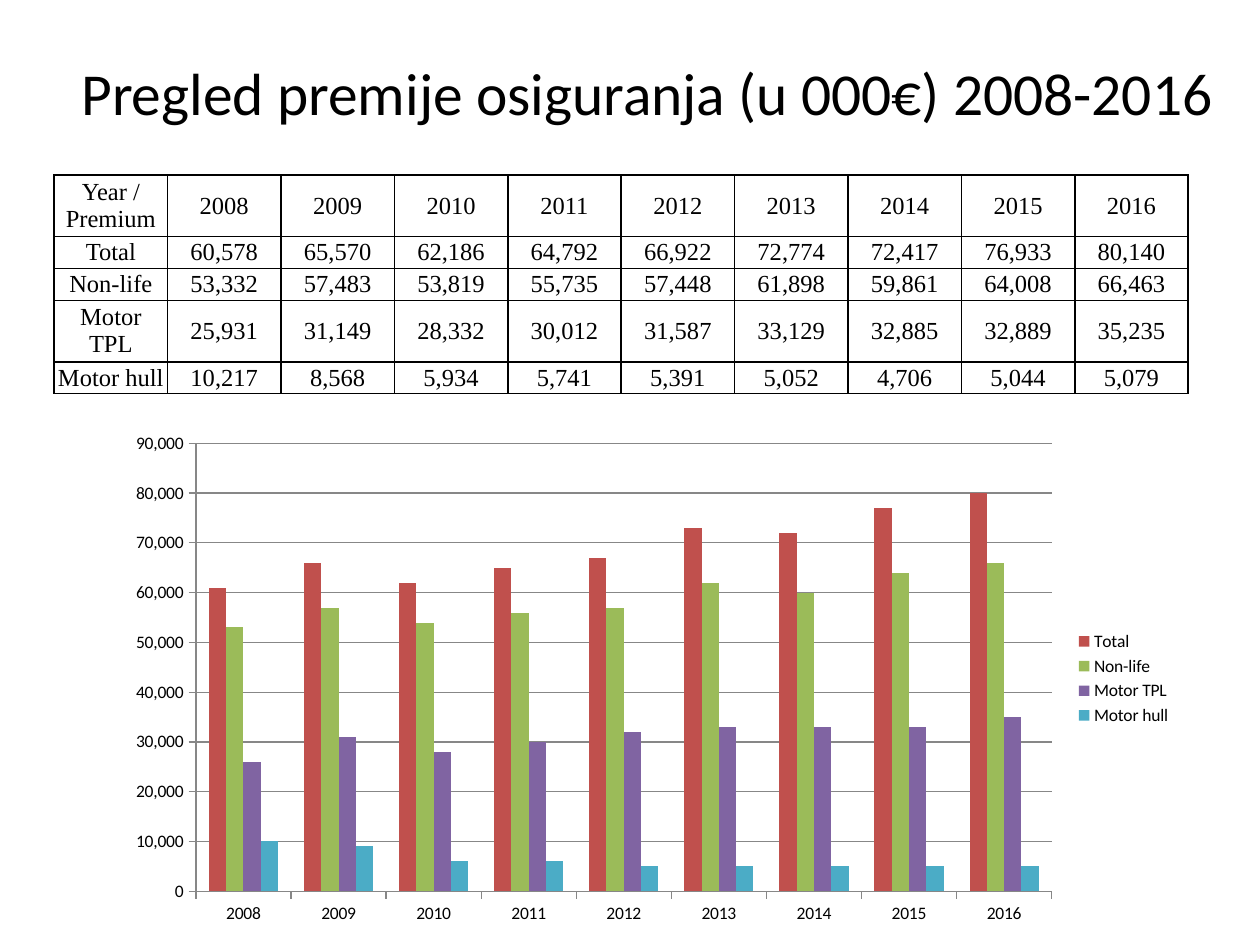
from lxml.etree import SubElement
from pptx import Presentation
from pptx.chart.data import CategoryChartData
from pptx.dml.color import RGBColor
from pptx.enum.chart import XL_CHART_TYPE as ChartType, XL_LEGEND_POSITION as LegendPosition
from pptx.enum.chart import XL_TICK_MARK as TickMark
from pptx.enum.text import MSO_ANCHOR as Anchor, PP_ALIGN as Align
from pptx.oxml.ns import qn
from pptx.util import Inches, Pt

BLACK = "000000"
AXIS_GREY = "878787"
YEARS = [str(year) for year in range(2008, 2017)]
PREMIUMS = {
    "Total": [60578, 65570, 62186, 64792, 66922, 72774, 72417, 76933, 80140],
    "Non-life": [53332, 57483, 53819, 55735, 57448, 61898, 59861, 64008, 66463],
    "Motor TPL": [25931, 31149, 28332, 30012, 31587, 33129, 32885, 32889, 35235],
    "Motor hull": [10217, 8568, 5934, 5741, 5391, 5052, 4706, 5044, 5079],
}
SERIES_COLORS = ["C0504D", "9BBB59", "8064A2", "4BACC6"]
MINIMUM_ROW_HEIGHTS = [0, 0.24, 0, 0, 0]
TABLE_HEIGHT = 1.73
COLUMN_WIDTH = 0.9
CELL_FORMAT = {
    "margin_left": Inches(0.03),
    "margin_right": Inches(0.03),
    "margin_top": Inches(0.01),
    "margin_bottom": Inches(0.01),
    "vertical_anchor": Anchor.MIDDLE,
}


def color(hex_string):
    """Return the colour for a hex string."""
    return RGBColor.from_string(hex_string)


def apply_format(target, values):
    """Set each named attribute on the target."""
    for name, value in values.items():
        setattr(target, name, value)


def style_font(font, name, size):
    """Give a font its typeface, size and black colour."""
    apply_format(font, {"name": name, "size": Pt(size)})
    font.color.rgb = color(BLACK)


def write_centered(frame, wording, font_name, size):
    """Write one centred paragraph into a text frame."""
    paragraph = frame.paragraphs[0]
    paragraph.alignment = Align.CENTER
    run = paragraph.add_run()
    run.text = wording
    style_font(run.font, font_name, size)


def add_title(slide, wording):
    """Add the slide heading."""
    heading = slide.shapes.add_textbox(Inches(0.5), Inches(0.3), Inches(9.38), Inches(0.85))
    frame = heading.text_frame
    apply_format(frame, {"word_wrap": True, "vertical_anchor": Anchor.MIDDLE})
    write_centered(frame, wording, "Calibri", 34)


def add_borders(cell):
    """Draw a thin black line on all four sides of a cell."""
    properties = cell._tc.get_or_add_tcPr()
    for side in ("a:lnL", "a:lnR", "a:lnT", "a:lnB"):
        line = SubElement(properties, qn(side), w=str(Pt(1)))
        fill = SubElement(line, qn("a:solidFill"))
        SubElement(fill, qn("a:srgbClr"), val=BLACK)


def add_premium_table(slide):
    """Add the table of premiums by year, its rows growing to fit their text."""
    rows = [["Year / Premium", *YEARS]]
    rows += [[kind, *(f"{amount:,}" for amount in amounts)] for kind, amounts in PREMIUMS.items()]
    frame = slide.shapes.add_table(
        len(rows), len(rows[0]), Inches(0.43), Inches(1.39),
        Inches(COLUMN_WIDTH * len(rows[0])), Inches(TABLE_HEIGHT))
    table = frame.table
    apply_format(table, {"first_row": False, "horz_banding": False})
    for column in table.columns:
        column.width = Inches(COLUMN_WIDTH)
    for row, height, wordings in zip(table.rows, MINIMUM_ROW_HEIGHTS, rows):
        row.height = Inches(height)
        for cell, wording in zip(row.cells, wordings):
            apply_format(cell, CELL_FORMAT)
            write_centered(cell.text_frame, wording, "Times New Roman", 14)
            add_borders(cell)
            cell.fill.background()
    frame.height = Inches(TABLE_HEIGHT)


def style_line(line):
    """Give an axis or grid line its grey stroke."""
    line.color.rgb = color(AXIS_GREY)
    line.width = Pt(0.75)


def add_premium_chart(slide):
    """Add the clustered columns of premiums, rounded to thousands."""
    premium_data = CategoryChartData(number_format="#,##0")
    premium_data.categories = YEARS
    for kind, amounts in PREMIUMS.items():
        premium_data.add_series(kind, [round(amount, -3) for amount in amounts])
    chart = slide.shapes.add_chart(
        ChartType.COLUMN_CLUSTERED, Inches(0.91), Inches(3.36),
        Inches(8.49), Inches(4.05), premium_data).chart
    style_font(chart.font, "Calibri", 10)
    apply_format(chart, {"has_title": False, "has_legend": True})
    apply_format(chart.legend, {"position": LegendPosition.RIGHT, "include_in_layout": False})

    plot = chart.plots[0]
    apply_format(plot, {"gap_width": 150, "overlap": 0, "vary_by_categories": False})
    for series, hex_string in zip(plot.series, SERIES_COLORS):
        series.format.fill.solid()
        series.format.fill.fore_color.rgb = color(hex_string)

    for axis in (chart.category_axis, chart.value_axis):
        axis.major_tick_mark = TickMark.OUTSIDE
        style_line(axis.format.line)
    amounts_axis = chart.value_axis
    apply_format(amounts_axis, {
        "minimum_scale": 0, "maximum_scale": 90000, "major_unit": 10000,
        "has_major_gridlines": True})
    apply_format(amounts_axis.tick_labels,
                 {"number_format": "#,##0", "number_format_is_linked": False})
    style_line(amounts_axis.major_gridlines.format.line)


def main():
    """Build and save the premium overview."""
    presentation = Presentation()
    apply_format(presentation, {"slide_width": Inches(10), "slide_height": Inches(7.5)})
    slide = presentation.slides.add_slide(presentation.slide_layouts[6])
    add_title(slide, "Pregled premije osiguranja (u 000€) 2008-2016 ")
    add_premium_table(slide)
    add_premium_chart(slide)
    presentation.save("out.pptx")


if __name__ == "__main__":
    main()
